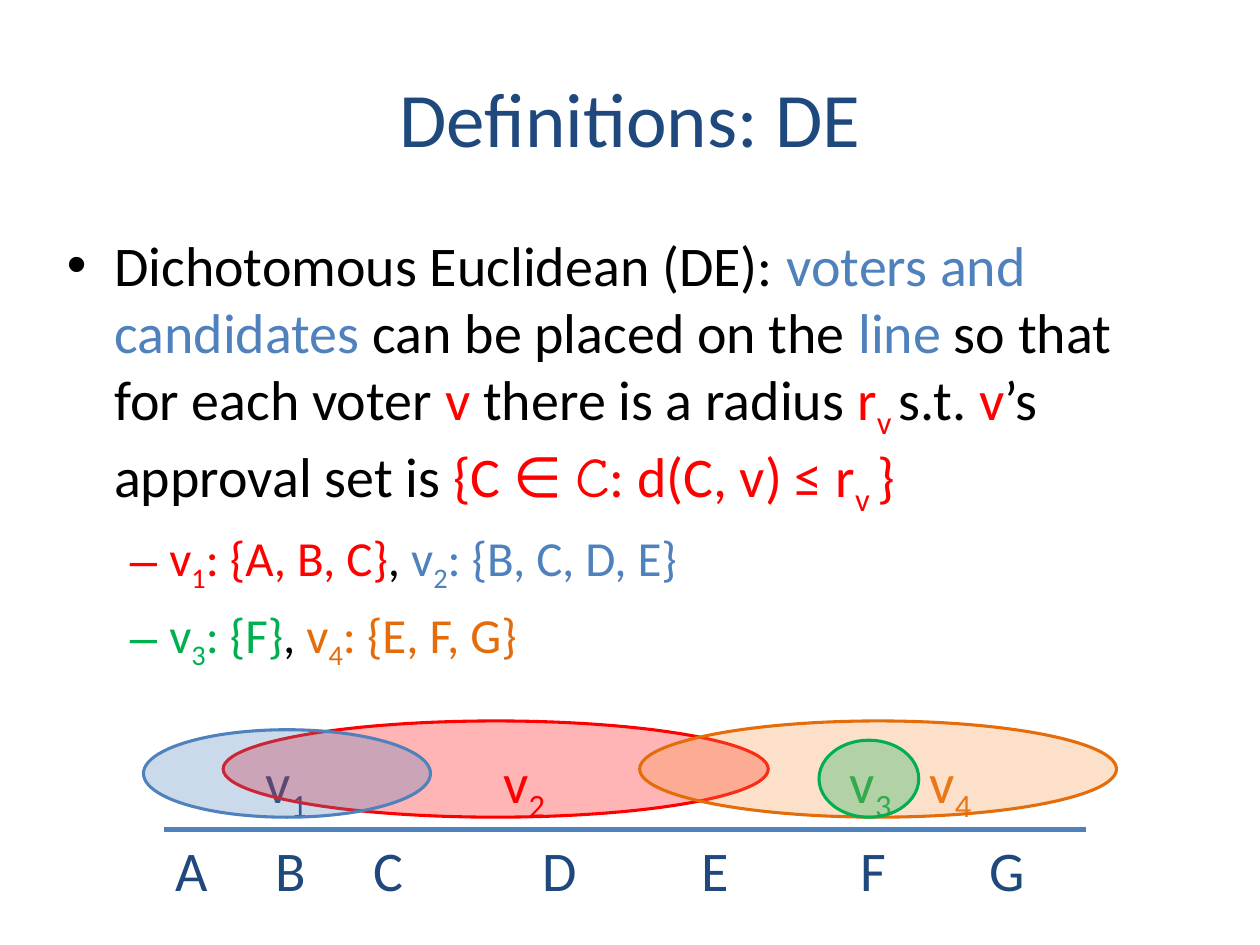
from lxml import etree
from pptx import Presentation
from pptx.dml.color import RGBColor
from pptx.enum.shapes import MSO_CONNECTOR as Connector, MSO_SHAPE as Shape
from pptx.enum.text import MSO_ANCHOR as Anchor, MSO_AUTO_SIZE as AutoSize, PP_ALIGN as Align
from pptx.oxml.ns import qn
from pptx.util import Pt

NAVY, BLUE, RED, GREEN = "1F497D", "4F81BD", "FF0000", "00B050"
ORANGE, PEACH, BLACK = "E46C0A", "F79646", "000000"

# Spans are (text, colour[, font]); underscores enclose a subscript
DEFINITION = [
    [("Dichotomous Euclidean (DE): ", BLACK), ("voters and candidates", BLUE),
     (" can be placed on the ", BLACK), ("line", BLUE), (" so that ", BLACK)],
    [("for each voter ", BLACK), ("v", RED), (" there is a radius ", BLACK),
     ("r_v _", RED), ("s.t. ", BLACK), ("v", RED), ("’s approval set is ", BLACK),
     ("{C ∈ ", RED), ("C", RED, "Comic Neue"), (": d(C, v) ≤ r_v _}", RED)],
]
EXAMPLES = [
    [("v_1_: {A, B, C}", RED), (",", BLACK), (" v_2_: {B, C, D, E}", BLUE)],
    [("v_3_: {F}", GREEN), (", ", BLACK), ("v_4_: {E, F, G}", ORANGE)],
]

# Label, left, width
CANDIDATES = [("A", 11.5, 33), ("B", 68.5, 32), ("C", 124.5, 32), ("D", 221, 35),
              ("E", 312, 30), ("F", 402.5, 30), ("G", 476.5, 35)]
# Label, left, colour
VOTERS = [("v_1_", 62.5, NAVY), ("v_2_", 198.5, RED),
          ("v_3_", 396.5, GREEN), ("v_4_", 442, ORANGE)]
# Left, width, height, fill, line
RANGES = [(45.5, 311.5, 55, RED, RED), (283.5, 272.5, 55, PEACH, ORANGE),
          (386, 57, 44, GREEN, GREEN), (0, 164, 50, BLUE, BLUE)]


def colour(hex_code):
    return RGBColor.from_string(hex_code)


def set_values(target, values):
    for name, value in values.items():
        setattr(target, name, value)


def place(part, left, top, width, height):
    set_values(part, {"left": Pt(left), "top": Pt(top),
                      "width": Pt(width), "height": Pt(height)})


def write(para, size, text, hex_code, font="Calibri"):
    for index, piece in enumerate(text.split("_")):
        if not piece:
            continue
        span = para.add_run()
        span.text = piece
        set_values(span.font, {"size": Pt(size), "name": font})
        span.font.color.rgb = colour(hex_code)
        if index % 2:
            span._r.get_or_add_rPr().set("baseline", "-25000")


def add_title(page, box):
    title = page.shapes.title
    place(title, *box)
    title.text_frame.vertical_anchor = Anchor.MIDDLE
    para = title.text_frame.paragraphs[0]
    para.alignment = Align.CENTER
    write(para, 44, "Definitions: DE", NAVY)


def add_definition(page, box):
    body = page.placeholders[1]
    place(body, *box)
    frame = body.text_frame
    frame.auto_size = AutoSize.NONE
    para = frame.paragraphs[0]
    for number, line in enumerate(DEFINITION):
        if number:
            para.add_line_break()
        for span in line:
            write(para, 32, *span)
    for example in EXAMPLES:
        para = frame.add_paragraph()
        para.level = 1
        for span in example:
            write(para, 28, *span)


def add_label(page, left, top, width, text, hex_code):
    label = page.shapes.add_textbox(Pt(left), Pt(top), Pt(width), Pt(46))
    set_values(label.text_frame, {"word_wrap": False,
                                  "auto_size": AutoSize.SHAPE_TO_FIT_TEXT})
    write(label.text_frame.paragraphs[0], 32, text, hex_code)


def add_range(page, left, top, width, height, fill, line):
    oval = page.shapes.add_shape(Shape.OVAL, Pt(left), Pt(top), Pt(width), Pt(height))
    oval.shadow.inherit = False
    oval.fill.solid()
    oval.fill.fore_color.rgb = colour(fill)
    tint = oval._element.spPr.find(qn("a:solidFill"))[0]
    etree.SubElement(tint, qn("a:alpha")).set("val", "29000")
    oval.line.color.rgb = colour(line)
    oval.line.width = Pt(1.75)


def add_diagram(page, box):
    left, top, width, height = box
    axis_y = top + height - 46
    # Axis
    axis = page.shapes.add_connector(Connector.STRAIGHT, Pt(left + 11.5), Pt(axis_y),
                                     Pt(left + width - 17.5), Pt(axis_y))
    axis.line.color.rgb = colour(BLUE)
    axis.line.width = Pt(3)
    etree.SubElement(axis._element.spPr, qn("a:effectLst"))
    # Candidates below the axis, voters above it
    for text, x, label_width in CANDIDATES:
        add_label(page, left + x, axis_y, label_width, text, NAVY)
    for text, x, hex_code in VOTERS:
        add_label(page, left + x, top + 11.5, 40, text, hex_code)
    # Approval ranges share one base line
    for x, oval_width, oval_height, fill, line in RANGES:
        add_range(page, left + x, top + 55 - oval_height, oval_width, oval_height, fill, line)


def main():
    deck = Presentation()
    set_values(deck, {"slide_width": Pt(720), "slide_height": Pt(540)})
    page = deck.slides.add_slide(deck.slide_layouts[1])
    add_definition(page, (31, 128, 648, 376.5))
    add_title(page, (36, 21.6, 648, 90))
    add_diagram(page, (82, 412, 556, 108))
    deck.save("out.pptx")


if __name__ == "__main__":
    main()
